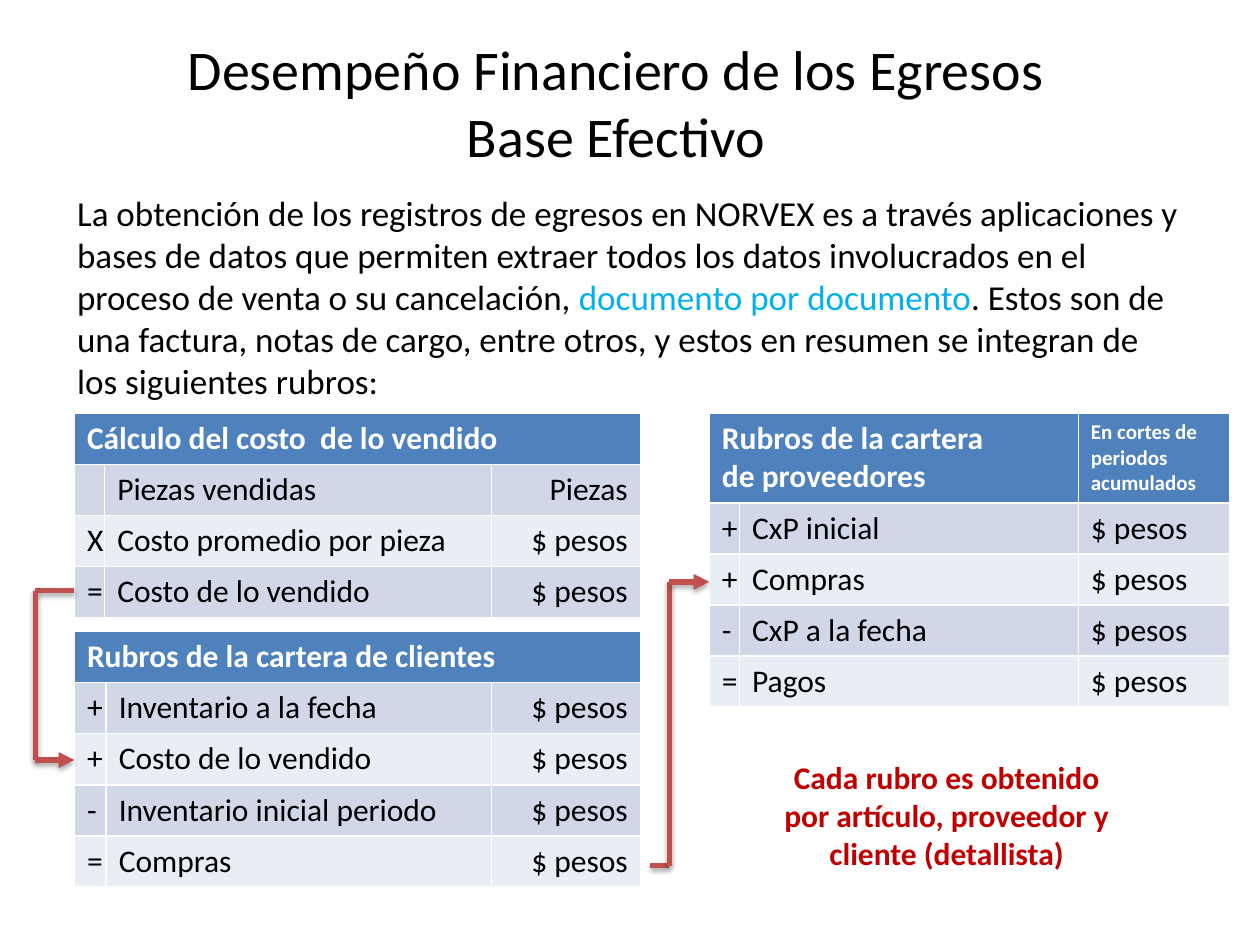
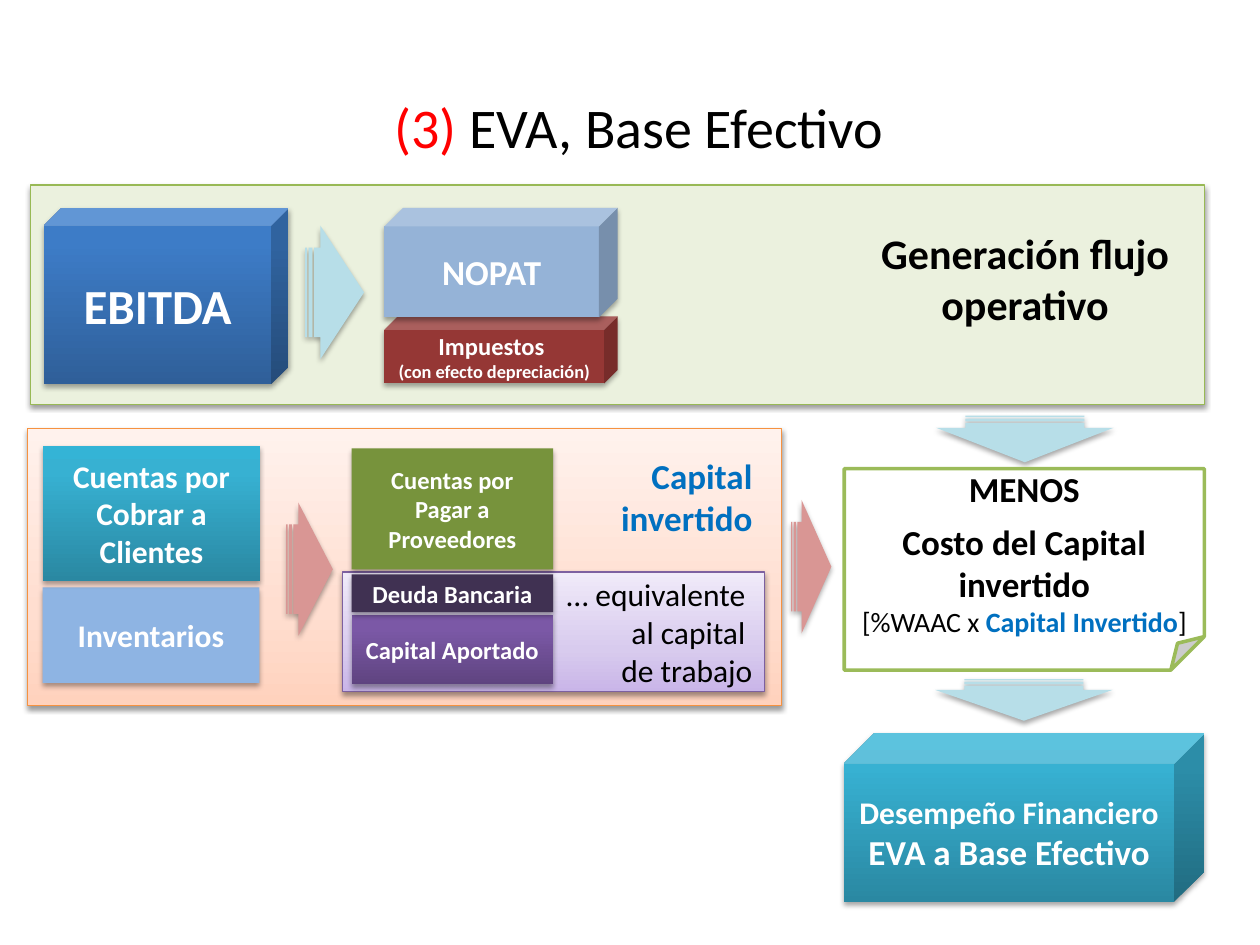
from copy import deepcopy

from lxml.etree import SubElement
from pptx import Presentation
from pptx.dml.color import RGBColor
from pptx.enum.shapes import MSO_CONNECTOR, MSO_SHAPE
from pptx.enum.text import MSO_ANCHOR, MSO_AUTO_SIZE, PP_ALIGN
from pptx.oxml.ns import qn
from pptx.util import Cm, Pt

FONT = "Calibri"
BLACK = RGBColor(0x00, 0x00, 0x00)
WHITE = RGBColor(0xFF, 0xFF, 0xFF)
RED = RGBColor(0xFF, 0x00, 0x00)
DARK_RED = RGBColor(0xC0, 0x00, 0x00)
SKY = RGBColor(0x00, 0xB0, 0xF0)
BLUE = RGBColor(0x00, 0x70, 0xC0)
HEADER = RGBColor(0x4F, 0x81, 0xBD)
BANDS = (RGBColor(0xD0, 0xD8, 0xE8), RGBColor(0xE9, 0xED, 0xF4))
FLOW = RGBColor(0xC0, 0x50, 0x4D)
PALE_GREEN = RGBColor(0xEB, 0xF1, 0xDE)
GREEN_EDGE = RGBColor(0x98, 0xB9, 0x55)
FOLD_EDGE = RGBColor(0x9B, 0xBB, 0x59)
ORANGE_EDGE = RGBColor(0xF6, 0x92, 0x40)
PURPLE_EDGE = RGBColor(0x7D, 0x60, 0xA0)
BRICK = RGBColor(0x95, 0x37, 0x35)
STEEL = RGBColor(0x95, 0xB3, 0xD7)
OLIVE = RGBColor(0x77, 0x93, 0x3C)
PLUM = RGBColor(0x40, 0x31, 0x52)
LIGHT_BLUE = RGBColor(0x8E, 0xB4, 0xE3)
PINK = RGBColor(0xD9, 0x96, 0x94)
ICE = RGBColor(0xB7, 0xDE, 0xE8)

# Gradients run from the bottom edge up: (position, colour)
PEACH = ((0, RGBColor(0xFF, 0xD2, 0xBD)), (0.35, RGBColor(0xFF, 0xDE, 0xD0)),
         (1, RGBColor(0xFF, 0xF2, 0xED)))
LILAC = ((0, RGBColor(0xC9, 0xB5, 0xE8)), (0.35, RGBColor(0xD8, 0xCB, 0xEE)),
         (1, RGBColor(0xF0, 0xEA, 0xF9)))
DEEP_BLUE = ((0, RGBColor(0x2F, 0x5F, 0x99)), (0.8, RGBColor(0x3D, 0x7C, 0xC7)),
             (1, RGBColor(0x3A, 0x7C, 0xCB)))
PURPLE = ((0, RGBColor(0x5F, 0x44, 0x80)), (0.8, RGBColor(0x7B, 0x58, 0xA6)),
          (1, RGBColor(0x7C, 0x57, 0xA8)))
TEAL = ((0, RGBColor(0x2A, 0x88, 0xA2)), (0.8, RGBColor(0x37, 0xB1, 0xD2)),
        (1, RGBColor(0x34, 0xB4, 0xD6)))


def write(paragraph, text, size=18, color=BLACK, bold=False, align=None):
    """Add a run to the paragraph; a newline becomes a line break."""
    if align is not None:
        paragraph.alignment = align
    for number, line in enumerate(text.split("\n")):
        if number:
            paragraph.add_line_break()
        run = paragraph.add_run()
        run.text = line
        run.font.name = FONT
        run.font.size = Pt(size)
        run.font.bold = bold
        run.font.color.rgb = color


def add_shadow(part, alpha=35, distance=1.8):
    """Add a soft downward shadow, after fill and line are set."""
    effects = SubElement(part._element.spPr, qn("a:effectLst"))
    outer = SubElement(effects, qn("a:outerShdw"), blurRad=str(Pt(3.1)),
                       dist=str(Pt(distance)), dir="5400000", rotWithShape="0")
    tint = SubElement(outer, qn("a:srgbClr"), val="000000")
    SubElement(tint, qn("a:alpha"), val=str(alpha * 1000))


deck = Presentation()
deck.slide_width, deck.slide_height = Cm(25.4), Cm(19.05)
expenses = deck.slides.add_slide(deck.slide_layouts[1])
eva = deck.slides.add_slide(deck.slide_layouts[5])

# Titles
title_runs = (
    (expenses, (0.71, 0.76, 23.42, 2.57),
     [("Desempeño Financiero de los Egresos\nBase Efectivo", BLACK)]),
    (eva, (1.17, 0.97, 23.42, 3.15), [("(3) ", RED), ("EVA, Base Efectivo", BLACK)]),
)
for slide, box, runs in title_runs:
    title = slide.shapes.title
    title.left, title.top, title.width, title.height = map(Cm, box)
    title.text_frame.auto_size = MSO_AUTO_SIZE.NONE
    title.text_frame.vertical_anchor = MSO_ANCHOR.MIDDLE
    for text, color in runs:
        write(title.text_frame.paragraphs[0], text, 32, color, align=PP_ALIGN.CENTER)

# Slide 1: introduction
intro = expenses.placeholders[1]
intro.left, intro.top, intro.width, intro.height = map(Cm, (1.3, 3.73, 22.86, 3.89))
intro.text_frame.auto_size = MSO_AUTO_SIZE.NONE
sentence = intro.text_frame.paragraphs[0]
properties = sentence._p.get_or_add_pPr()
properties.set("marL", "0")
properties.set("indent", "0")
SubElement(properties, qn("a:buNone"))
write(sentence, "La obtención de los registros de egresos en NORVEX es a través "
      "aplicaciones y bases de datos que permiten extraer todos los datos "
      "involucrados en el proceso de venta o su cancelación, ", 20)
write(sentence, "documento por documento", 20, SKY)
write(sentence, ". Estos son de una factura, notas de cargo, entre otros, y estos "
      "en resumen se integran de los siguientes rubros:", 20)

# Slide 1: tables (left, top, columns, header height, amount alignment, header, rows)
ROW_HEIGHT = 1.03
PESOS = "$ pesos"
ledgers = (
    (1.5, 8.33, (0.61, 7.8, 3), ROW_HEIGHT, PP_ALIGN.RIGHT,
     ("Cálculo del costo  de lo vendido", None),
     [("", "Piezas vendidas", "Piezas"), ("X", "Costo promedio por pieza", PESOS),
      ("=", "Costo de lo vendido", PESOS)]),
    (14.3, 8.33, (0.58, 6.83, 3.05), 1.75, PP_ALIGN.LEFT,
     ("Rubros de la cartera\nde proveedores", "En cortes de periodos acumulados"),
     [("+", "CxP inicial", PESOS), ("+", "Compras", PESOS),
      ("-", "CxP a la fecha", PESOS), ("=", "Pagos", PESOS)]),
    (1.5, 12.73, (0.64, 7.77, 3), ROW_HEIGHT, PP_ALIGN.RIGHT,
     ("Rubros de la cartera de clientes", None),
     [("+", "Inventario a la fecha", PESOS), ("+", "Costo de lo vendido", PESOS),
      ("-", "Inventario inicial periodo", PESOS), ("=", "Compras", PESOS)]),
)
for left, top, widths, header_height, amount_align, (heading, period), rows in ledgers:
    height = header_height + ROW_HEIGHT * len(rows)
    ledger = expenses.shapes.add_table(len(rows) + 1, 3, Cm(left), Cm(top),
                                       Cm(sum(widths)), Cm(height)).table
    for column, width in zip(ledger.columns, widths):
        column.width = Cm(width)
    for number, row in enumerate(ledger.rows):
        row.height = Cm(ROW_HEIGHT if number else header_height)
        for cell in row.cells:
            cell.fill.solid()
            cell.fill.fore_color.rgb = BANDS[(number - 1) % 2] if number else HEADER

    ledger.cell(0, 0).merge(ledger.cell(0, 1 if period else 2))
    frame = ledger.cell(0, 0).text_frame
    for number, line in enumerate(heading.split("\n")):
        paragraph = frame.add_paragraph() if number else frame.paragraphs[0]
        write(paragraph, line, color=WHITE, bold=True)
    if period:
        write(ledger.cell(0, 2).text_frame.paragraphs[0], period, 12, WHITE, True)

    for row, (sign, concept, amount) in enumerate(rows, 1):
        sign_align = PP_ALIGN.CENTER if sign == "X" else PP_ALIGN.LEFT
        aligned = ((sign, sign_align), (concept, PP_ALIGN.LEFT), (amount, amount_align))
        for column, (text, align) in enumerate(aligned):
            if text:
                write(ledger.cell(row, column).text_frame.paragraphs[0], text, align=align)

# Slide 1: arrows that carry one table's result into the next
routes = (
    ((1.5, 11.91), (0.71, 11.91), (0.71, 15.32), (1.5, 15.32)),
    ((13.11, 17.45), (13.49, 17.45), (13.49, 11.73), (14.3, 11.73)),
)
for route in routes:
    for start, end in zip(route, route[1:]):
        segment = expenses.shapes.add_connector(
            MSO_CONNECTOR.STRAIGHT, *map(Cm, start + end))
        segment.line.color.rgb = FLOW
        segment.line.width = Pt(3)
        if end == route[-1]:
            SubElement(segment.line._get_or_add_ln(), qn("a:tailEnd"), type="triangle")
        add_shadow(segment)

# Slide 2: panels and blocks
# (preset, box, cube depth, fill, edge, text alignment, [(text, size)], text colour)
RECT, CUBE = MSO_SHAPE.RECTANGLE, MSO_SHAPE.CUBE
CENTER, RIGHT = PP_ALIGN.CENTER, PP_ALIGN.RIGHT
blocks = (
    (RECT, (0.56, 8.64, 15.19, 5.59), None, PEACH, ORANGE_EDGE, CENTER, [], BLACK),
    (RECT, (6.91, 11.53, 8.51, 2.41), None, LILAC, PURPLE_EDGE, RIGHT,
     [("… equivalente ", 18), ("al capital ", 18), ("de trabajo", 18)], BLACK),
    (RECT, (0.61, 3.73, 23.67, 4.42), None, PALE_GREEN, GREEN_EDGE, CENTER, [], BLACK),
    (CUBE, (0.89, 4.19, 4.93, 3.56), 0.1, DEEP_BLUE, None, CENTER,
     [("EBITDA", 28)], WHITE),
    (CUBE, (7.75, 6.38, 4.7, 1.35), 0.2, BRICK, None, CENTER,
     [("Impuestos ", 14), ("(con efecto depreciación)", 10.5)], WHITE),
    (CUBE, (7.75, 4.19, 4.7, 2.21), 0.17, STEEL, None, CENTER, [("NOPAT", 20)], WHITE),
    (RECT, (7.09, 9.04, 4.06, 2.44), None, OLIVE, None, CENTER,
     [("Cuentas por Pagar a Proveedores", 14)], WHITE),
    (RECT, (7.09, 12.4, 4.06, 1.4), None, PURPLE, None, CENTER,
     [("Capital Aportado", 14)], WHITE),
    (RECT, (7.09, 11.58, 4.06, 0.76), None, PLUM, None, CENTER,
     [("Deuda Bancaria", 14)], WHITE),
    (RECT, (0.86, 11.84, 4.37, 1.93), None, LIGHT_BLUE, None, CENTER,
     [("Inventarios", 18)], WHITE),
    (RECT, (0.86, 8.99, 4.39, 2.72), None, TEAL, None, CENTER,
     [("Cuentas por Cobrar a Clientes", 18)], WHITE),
    (CUBE, (17.02, 14.78, 7.26, 3.4), 0.18, TEAL, None, CENTER,
     [("Desempeño Financiero", 18), ("EVA a Base Efectivo", 20)], WHITE),
)
for preset, box, depth, fill, edge, align, lines, color in blocks:
    block = eva.shapes.add_shape(preset, *map(Cm, box))
    if depth:
        block.adjustments[0] = depth
    if isinstance(fill, RGBColor):
        block.fill.solid()
        block.fill.fore_color.rgb = fill
    else:
        block.fill.gradient()
        block.fill.gradient_angle = 90
        stops = block._element.spPr.find(".//" + qn("a:gsLst"))
        stops.insert(1, deepcopy(stops[0]))
        for stop, (position, shade) in zip(block.fill.gradient_stops, fill):
            stop.position = position
            stop.color.rgb = shade
    if edge:
        block.line.color.rgb = edge
        block.line.width = Pt(0.75)
        add_shadow(block, alpha=38, distance=1.6)
    else:
        block.line.fill.background()
        add_shadow(block)
    frame = block.text_frame
    frame.vertical_anchor = MSO_ANCHOR.MIDDLE
    for number, (text, size) in enumerate(lines):
        paragraph = frame.add_paragraph() if number else frame.paragraphs[0]
        write(paragraph, text, size, color, color == WHITE, align)

# Slide 2: striped arrows (box, rotation, colour)
arrows = (
    ((5.77, 10.13, 0.94, 2.69), 0, PINK),
    ((6.15, 4.55, 1.19, 2.69), 0, ICE),
    ((15.95, 10.08, 0.81, 2.69), 0, PINK),
    ((20.19, 7.06, 0.94, 3.58), 90, ICE),
    ((20.22, 12.32, 0.84, 3.58), 90, ICE),
)
for box, rotation, color in arrows:
    arrow = eva.shapes.add_shape(MSO_SHAPE.STRIPED_RIGHT_ARROW, *map(Cm, box))
    arrow.rotation = rotation
    arrow.adjustments[0], arrow.adjustments[1] = 0.67, 0.74
    arrow.fill.solid()
    arrow.fill.fore_color.rgb = color
    arrow.line.fill.background()
    add_shadow(arrow)

# Slide 2: cost of capital note
cost = eva.shapes.add_shape(MSO_SHAPE.FOLDED_CORNER, *map(Cm, (17.02, 9.45, 7.26, 4.06)))
cost.shadow.inherit = False
cost.fill.solid()
cost.fill.fore_color.rgb = WHITE
cost.line.color.rgb = FOLD_EDGE
cost.line.width = Pt(2)
frame = cost.text_frame
frame.vertical_anchor = MSO_ANCHOR.MIDDLE
write(frame.paragraphs[0], "MENOS", 20, bold=True, align=CENTER)
charge = frame.add_paragraph()
charge.space_before = Pt(6)
write(charge, "Costo del Capital invertido", 20, bold=True, align=CENTER)
formula = frame.add_paragraph()
write(formula, "[%WAAC x ", 16, align=CENTER)
write(formula, "Capital Invertido", 16, BLUE, True)
write(formula, "]", 16)

# Free captions on both slides
captions = (
    (expenses, (15.29, 15.16, 7.59, 2.57), 18, DARK_RED, CENTER,
     "Cada rubro es obtenido por artículo, proveedor y cliente (detallista)"),
    (eva, (16.41, 4.47, 8.51, 2.31), 24, BLACK, CENTER, "Generación flujo operativo"),
    (eva, (11.56, 9.04, 3.86, 1.96), 20, BLUE, RIGHT, "Capital invertido"),
)
for slide, box, size, color, align, text in captions:
    caption = slide.shapes.add_textbox(*map(Cm, box)).text_frame
    caption.word_wrap = True
    write(caption.paragraphs[0], text, size, color, True, align)

deck.save("out.pptx")
